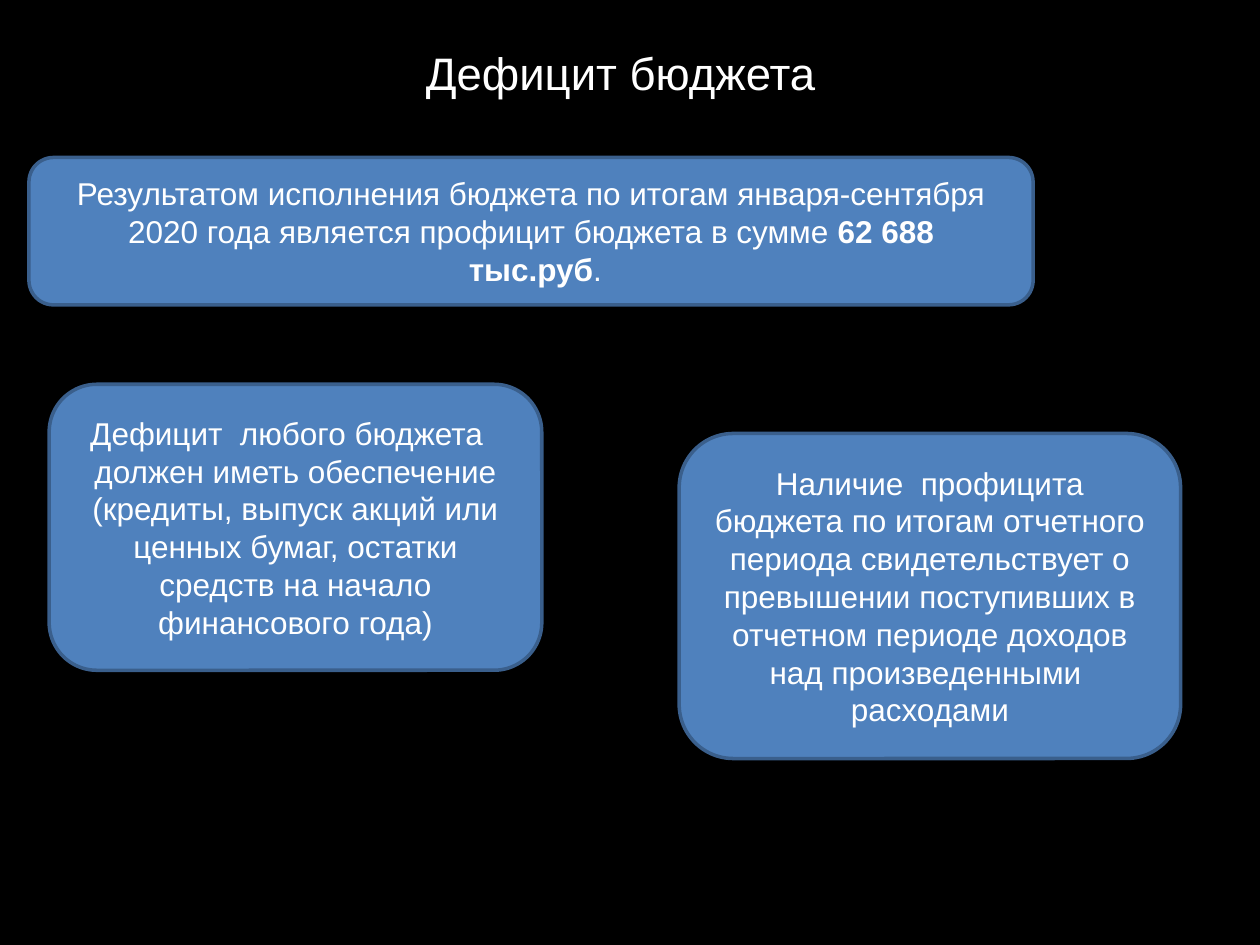
from dataclasses import dataclass

from pptx import Presentation
from pptx.dml.color import RGBColor
from pptx.enum.shapes import MSO_SHAPE
from pptx.enum.text import MSO_ANCHOR, MSO_AUTO_SIZE, PP_ALIGN
from pptx.slide import Slide
from pptx.text.text import Font
from pptx.util import Inches, Pt


@dataclass(frozen=True)
class Theme:
    font: str = "Arial"
    background: RGBColor = RGBColor(0x00, 0x00, 0x00)
    text: RGBColor = RGBColor(0xFF, 0xFF, 0xFF)
    fill: RGBColor = RGBColor(0x4F, 0x81, 0xBD)
    border: RGBColor = RGBColor(0x3A, 0x5F, 0x8C)
    border_width: Pt = Pt(2)
    title_size: Pt = Pt(26)
    body_size: Pt = Pt(18)


@dataclass(frozen=True)
class Phrase:
    text: str
    bold: bool = False


@dataclass(frozen=True)
class Statement:
    left: float
    top: float
    width: float
    height: float
    paragraphs: tuple[tuple[Phrase, ...], ...]


THEME = Theme()

STATEMENTS = (
    Statement(0.23, 1.25, 7.97, 1.17, (
        (
            Phrase("Результатом исполнения бюджета по итогам января-сентября "
                   "2020 года является профицит бюджета в сумме "),
            Phrase("62 688", bold=True),
        ),
        (Phrase(" тыс.руб", bold=True), Phrase(".")),
    )),
    Statement(5.39, 3.44, 3.98, 2.58, (
        (Phrase("Наличие  профицита бюджета по итогам отчетного периода "
                "свидетельствует о превышении поступивших в отчетном периоде "
                "доходов над произведенными  расходами"),),
    )),
    Statement(0.39, 3.05, 3.91, 2.27, (
        (Phrase("Дефицит  любого бюджета   должен иметь обеспечение "
                "(кредиты, выпуск акций или ценных бумаг, остатки средств "
                "на начало финансового года)"),),
    )),
)


def style_font(font: Font, size: Pt, bold: bool = False) -> None:
    font.name = THEME.font
    font.size = size
    font.bold = bold
    font.color.rgb = THEME.text


def set_title(slide: Slide, wording: str) -> None:
    title = slide.shapes.title
    title.left, title.top = Inches(3.28), Inches(0.31)
    title.width, title.height = Inches(3.91), Inches(0.54)
    frame = title.text_frame
    frame.text = wording
    frame.word_wrap = True
    frame.auto_size = MSO_AUTO_SIZE.SHAPE_TO_FIT_TEXT
    frame.vertical_anchor = MSO_ANCHOR.TOP
    heading = frame.paragraphs[0]
    heading.alignment = PP_ALIGN.LEFT
    style_font(heading.runs[0].font, THEME.title_size)


def add_statement(slide: Slide, statement: Statement) -> None:
    box = slide.shapes.add_shape(
        MSO_SHAPE.ROUNDED_RECTANGLE,
        Inches(statement.left), Inches(statement.top),
        Inches(statement.width), Inches(statement.height),
    )
    box.shadow.inherit = False
    box.fill.solid()
    box.fill.fore_color.rgb = THEME.fill
    box.line.color.rgb = THEME.border
    box.line.width = THEME.border_width

    frame = box.text_frame
    frame.word_wrap = True
    frame.vertical_anchor = MSO_ANCHOR.MIDDLE
    for index, phrases in enumerate(statement.paragraphs):
        paragraph = frame.add_paragraph() if index else frame.paragraphs[0]
        paragraph.alignment = PP_ALIGN.CENTER
        for phrase in phrases:
            run = paragraph.add_run()
            run.text = phrase.text
            style_font(run.font, THEME.body_size, phrase.bold)


def main() -> None:
    presentation = Presentation()
    presentation.slide_width, presentation.slide_height = Inches(10), Inches(7.5)
    title_only = presentation.slide_layouts.get_by_name("Title Only")
    slide = presentation.slides.add_slide(title_only)
    slide.background.fill.solid()
    slide.background.fill.fore_color.rgb = THEME.background

    set_title(slide, "Дефицит бюджета")
    for statement in STATEMENTS:
        add_statement(slide, statement)
    presentation.save("out.pptx")


if __name__ == "__main__":
    main()
